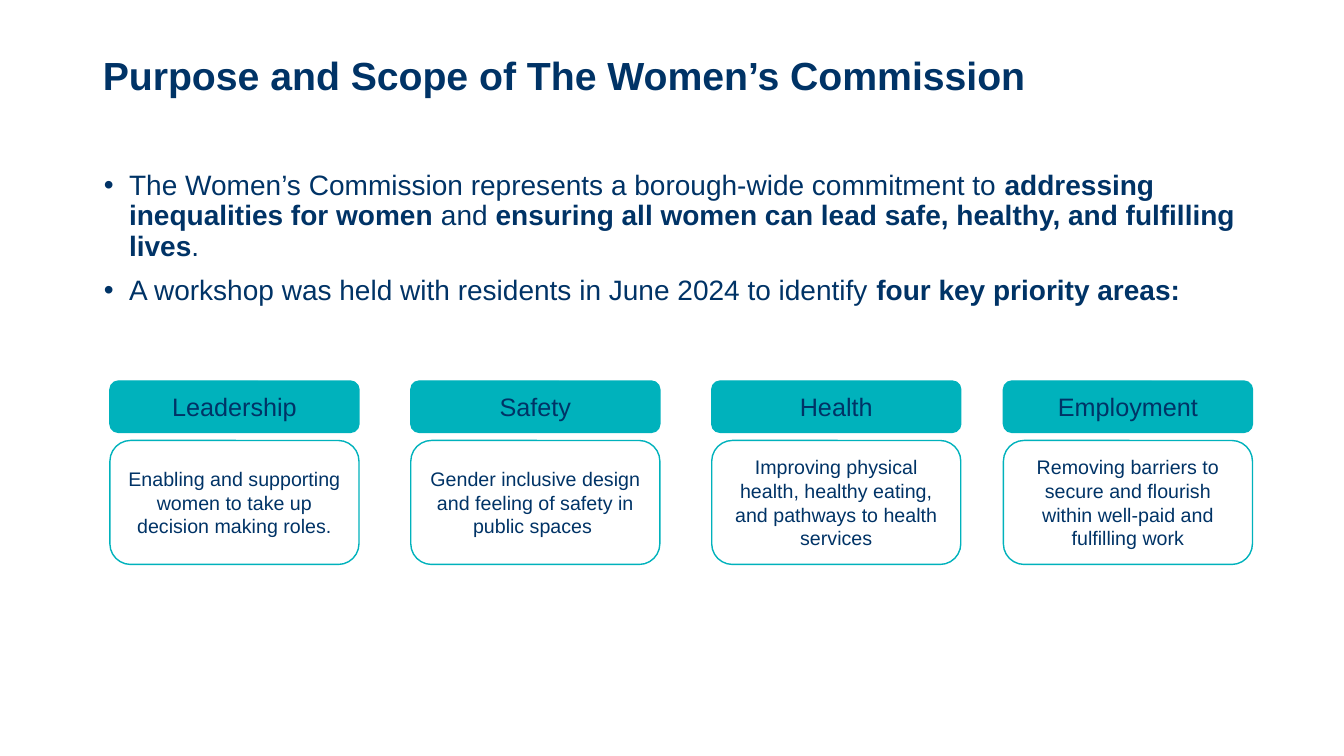
from pptx import Presentation
from pptx.dml.color import RGBColor
from pptx.enum.shapes import MSO_SHAPE as Preset
from pptx.enum.text import MSO_ANCHOR as Anchor, MSO_AUTO_SIZE as AutoSize, PP_ALIGN as Align
from pptx.oxml import parse_xml
from pptx.oxml.ns import nsdecls
from pptx.util import Inches, Pt

WIDTH, HEIGHT = Inches(13.33), Inches(7.5)
NAVY, TEAL = "003366", "00B2BC"
COLUMN_LEFTS = (8.18, 30.57, 52.96, 74.66)
COLUMN_WIDTH = 18.53

TITLE = "Purpose and Scope of The Women’s Commission"
POINTS = (
    (
        ("The Women’s Commission represents a borough-wide commitment to ", False),
        ("addressing inequalities for women ", True),
        ("and ", False),
        ("ensuring all women can lead safe, healthy, and fulfilling lives", True),
        (".", False),
    ),
    (
        ("A workshop was held with residents in June 2024 to identify ", False),
        ("four key priority areas:", True),
    ),
)
PRIORITIES = (
    ("Leadership", "Enabling and supporting women to take up decision making roles."),
    ("Safety", "Gender inclusive design and feeling of safety in public spaces "),
    ("Health", "Improving physical health, healthy eating, and pathways to health services"),
    ("Employment", "Removing barriers to secure and flourish within well-paid and fulfilling work"),
)


def colour(code):
    return RGBColor.from_string(code)


def apply(target, formats):
    for attribute, value in formats.items():
        setattr(target, attribute, value)


def share(left, top, width, height):
    return {
        "left": round(WIDTH * left / 100),
        "top": round(HEIGHT * top / 100),
        "width": round(WIDTH * width / 100),
        "height": round(HEIGHT * height / 100),
    }


def write(paragraph, pieces, size):
    for words, bold in pieces:
        piece = paragraph.add_run()
        piece.text = words
        apply(piece.font, {"name": "Arial", "size": Pt(size), "bold": bold})
        piece.font.color.rgb = colour(NAVY)


def add_bullet(paragraph):
    properties = paragraph._p.get_or_add_pPr()
    properties.set("marL", str(Inches(0.25)))
    properties.set("indent", str(-Inches(0.25)))
    for tag in ('buFont %s typeface="Arial"', 'buChar %s char="•"'):
        properties.append(parse_xml(f"<a:{tag % nsdecls('a')}/>"))


def fill_title(title):
    apply(title, share(6.9, 5.07, 80.2, 10.4))
    apply(title.text_frame, {
        "vertical_anchor": Anchor.MIDDLE, "word_wrap": True, "auto_size": AutoSize.NONE,
    })
    heading = title.text_frame.paragraphs[0]
    apply(heading, {"alignment": Align.LEFT, "line_spacing": 0.9})
    write(heading, [(TITLE, True)], 28)


def fill_points(body):
    apply(body, share(6.98, 22, 86.27, 24))
    frame = body.text_frame
    apply(frame, {
        "vertical_anchor": Anchor.TOP, "word_wrap": True, "auto_size": AutoSize.NONE,
    })
    for number, pieces in enumerate(POINTS):
        point = frame.add_paragraph() if number else frame.paragraphs[0]
        add_bullet(point)
        apply(point, {
            "alignment": Align.LEFT,
            "line_spacing": 0.9,
            "space_before": Pt(10 if number else 0),
        })
        write(point, pieces, 20)


def add_card(slide, place, words, size, fill=None):
    card = slide.shapes.add_shape(Preset.ROUNDED_RECTANGLE, **place)
    card.shadow.inherit = False
    if fill:
        card.fill.solid()
        card.fill.fore_color.rgb = colour(fill)
    else:
        card.fill.background()
    card.line.color.rgb = colour(TEAL)
    card.line.width = Pt(1)
    apply(card.text_frame, {"word_wrap": True, "vertical_anchor": Anchor.MIDDLE})
    label = card.text_frame.paragraphs[0]
    label.alignment = Align.CENTER
    write(label, [(words, False)], size)


def main():
    deck = Presentation()
    apply(deck, {"slide_width": WIDTH, "slide_height": HEIGHT})
    slide = deck.slides.add_slide(deck.slide_layouts[1])
    fill_title(slide.shapes.title)
    fill_points(slide.placeholders[1])
    for left, (area, aim) in zip(COLUMN_LEFTS, PRIORITIES):
        add_card(slide, share(left, 50.4, COLUMN_WIDTH, 6.8), area, 18, TEAL)
        add_card(slide, share(left, 58.27, COLUMN_WIDTH, 16.4), aim, 14)
    deck.save("out.pptx")


if __name__ == "__main__":
    main()
